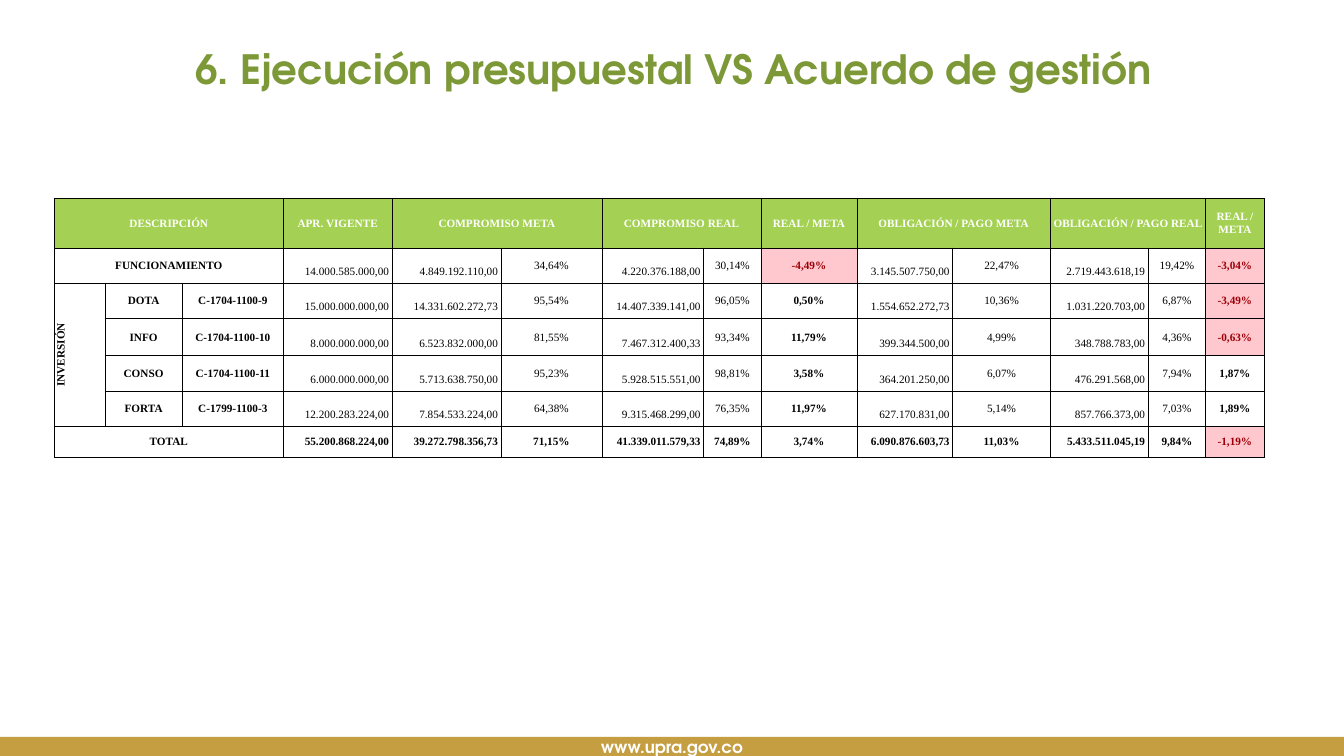
"""Builds the slide that compares budget execution with the management agreement."""
from lxml.etree import SubElement
from pptx import Presentation
from pptx.dml.color import RGBColor
from pptx.enum.shapes import MSO_SHAPE
from pptx.enum.text import MSO_ANCHOR, MSO_AUTO_SIZE, PP_ALIGN
from pptx.oxml import parse_xml
from pptx.oxml.ns import nsdecls, qn
from pptx.util import Inches, Pt

WHITE = RGBColor(0xFF, 0xFF, 0xFF)
BLACK = RGBColor(0x00, 0x00, 0x00)
TITLE_GREEN = RGBColor(0x7D, 0x98, 0x37)
HEADER_GREEN = RGBColor(0xA4, 0xD1, 0x53)
GOLD = RGBColor(0xC5, 0x9E, 0x41)
PINK = RGBColor(0xFF, 0xC7, 0xCE)
DARK_RED = RGBColor(0x9C, 0x00, 0x06)

COLUMN_WIDTHS = [0.5, 0.77, 1, 1.08, 1.08, 1, 1.01, 0.57, 0.95, 0.95, 0.97, 0.97, 0.57, 0.58]
ROW_HEIGHTS = [0.49, 0.35, 0.35, 0.37, 0.35, 0.35, 0.31]
AMOUNT_COLUMNS = {3, 4, 6, 9, 11}
BOLD_COLUMNS = {0, 1, 2, 8, 13}
MERGES = [(0, 0, 0, 2), (0, 4, 0, 5), (0, 6, 0, 7), (0, 9, 0, 10), (0, 11, 0, 12),
          (1, 0, 1, 2), (2, 0, 5, 0), (6, 0, 6, 2)]
BUDGET = [
    ["DESCRIPCIÓN", "", "", "APR. VIGENTE", "COMPROMISO META", "", "COMPROMISO REAL", "",
     "REAL / META", "OBLIGACIÓN / PAGO META", "", "OBLIGACIÓN / PAGO REAL", "", "REAL / META"],
    ["FUNCIONAMIENTO", "", "", "14.000.585.000,00", "4.849.192.110,00", "34,64%",
     "4.220.376.188,00", "30,14%", "-4,49%", "3.145.507.750,00", "22,47%",
     "2.719.443.618,19", "19,42%", "-3,04%"],
    ["INVERSIÓN", "DOTA", "C-1704-1100-9", "15.000.000.000,00", "14.331.602.272,73", "95,54%",
     "14.407.339.141,00", "96,05%", "0,50%", "1.554.652.272,73", "10,36%",
     "1.031.220.703,00", "6,87%", "-3,49%"],
    ["", "INFO", "C-1704-1100-10", "8.000.000.000,00", "6.523.832.000,00", "81,55%",
     "7.467.312.400,33", "93,34%", "11,79%", "399.344.500,00", "4,99%",
     "348.788.783,00", "4,36%", "-0,63%"],
    ["", "CONSO", "C-1704-1100-11", "6.000.000.000,00", "5.713.638.750,00", "95,23%",
     "5.928.515.551,00", "98,81%", "3,58%", "364.201.250,00", "6,07%",
     "476.291.568,00", "7,94%", "1,87%"],
    ["", "FORTA", "C-1799-1100-3", "12.200.283.224,00", "7.854.533.224,00", "64,38%",
     "9.315.468.299,00", "76,35%", "11,97%", "627.170.831,00", "5,14%",
     "857.766.373,00", "7,03%", "1,89%"],
    ["TOTAL", "", "", "55.200.868.224,00", "39.272.798.356,73", "71,15%",
     "41.339.011.579,33", "74,89%", "3,74%", "6.090.876.603,73", "11,03%",
     "5.433.511.045,19", "9,84%", "-1,19%"],
]


class BudgetSlide:
    """Holds the fonts and the current page, and draws each kind of element."""

    heading_font = "TeX Gyre Adventor"
    table_font = "Times New Roman"

    def __init__(self, deck):
        """Adds a title-only page to the deck."""
        self.page = deck.slides.add_slide(deck.slide_layouts[5])

    def set_text(self, para, text, font_name, size, color, bold, align):
        """Fills one paragraph with uniformly formatted text."""
        para.text = text
        para.alignment = align
        font = para.font
        font.name, font.size, font.bold = font_name, Pt(size), bold
        font.color.rgb = color

    def title(self, text, left, top, width, height):
        """Places and formats the title placeholder."""
        box = self.page.shapes.title
        box.left, box.top = Inches(left), Inches(top)
        box.width, box.height = Inches(width), Inches(height)
        frame = box.text_frame
        frame.auto_size = MSO_AUTO_SIZE.NONE
        frame.word_wrap = True
        frame.vertical_anchor = MSO_ANCHOR.TOP
        frame.margin_left = 0
        para = frame.paragraphs[0]
        self.set_text(para, text, self.heading_font, 28.8, TITLE_GREEN, True, PP_ALIGN.RIGHT)
        para.line_spacing = 0.9

    def band(self, text, left, top, width, height):
        """Draws a gold band with centred text."""
        box = self.page.shapes.add_shape(
            MSO_SHAPE.RECTANGLE, Inches(left), Inches(top), Inches(width), Inches(height))
        box.shadow.inherit = False
        box.fill.solid()
        box.fill.fore_color.rgb = GOLD
        box.line.fill.background()
        frame = box.text_frame
        frame.margin_top = frame.margin_bottom = 0
        frame.vertical_anchor = MSO_ANCHOR.MIDDLE
        self.set_text(frame.paragraphs[0], text, self.heading_font, 12, WHITE, True,
                      PP_ALIGN.CENTER)

    def table(self, values, left, top):
        """Draws the budget table with its merged cells."""
        table = self.page.shapes.add_table(
            len(ROW_HEIGHTS), len(COLUMN_WIDTHS), Inches(left), Inches(top),
            Inches(sum(COLUMN_WIDTHS)), Inches(sum(ROW_HEIGHTS))).table
        table.first_row = table.horz_banding = False
        for column, width in zip(table.columns, COLUMN_WIDTHS):
            column.width = Inches(width)
        for row, height in zip(table.rows, ROW_HEIGHTS):
            row.height = Inches(height)
        for row_index, row_values in enumerate(values):
            for column_index, text in enumerate(row_values):
                self.cell(table.cell(row_index, column_index), text, row_index, column_index)
        for first_row, first_column, last_row, last_column in MERGES:
            table.cell(first_row, first_column).merge(table.cell(last_row, last_column))
        table.cell(2, 0)._tc.get_or_add_tcPr().set("vert", "vert270")

    def cell(self, cell, text, row_index, column_index):
        """Formats one cell according to its row, column and sign."""
        is_header = row_index == 0
        is_total = row_index == len(ROW_HEIGHTS) - 1
        is_amount = column_index in AMOUNT_COLUMNS and not is_header
        is_negative = text.startswith("-")
        cell.margin_left = cell.margin_right = cell.margin_top = cell.margin_bottom = 0
        cell.vertical_anchor = MSO_ANCHOR.MIDDLE
        if is_amount:
            cell.margin_right = Inches(0.03)
            cell.margin_top = Inches(0 if is_total else 0.12)
        if is_header or is_negative:
            cell.fill.solid()
            cell.fill.fore_color.rgb = HEADER_GREEN if is_header else PINK
        else:
            cell.fill.background()
        color = WHITE if is_header else DARK_RED if is_negative else BLACK
        bold = is_header or is_total or column_index in BOLD_COLUMNS
        align = PP_ALIGN.RIGHT if is_amount else PP_ALIGN.CENTER
        self.set_text(cell.text_frame.paragraphs[0], text, self.table_font, 8, color, bold, align)
        self.borders(cell)

    def borders(self, cell):
        """Adds thin black lines to the four sides of a cell."""
        properties = cell._tc.get_or_add_tcPr()
        for position, side in enumerate(("lnL", "lnR", "lnT", "lnB")):
            line = parse_xml(f'<a:{side} {nsdecls("a")} w="{Pt(0.5)}"/>')
            fill = SubElement(line, qn("a:solidFill"))
            SubElement(fill, qn("a:srgbClr"), val=str(BLACK))
            properties.insert(position, line)


def main():
    """Builds and saves the deck."""
    deck = Presentation()
    deck.slide_width, deck.slide_height = Inches(13.33), Inches(7.5)
    slide = BudgetSlide(deck)
    slide.band("www.upra.gov.co", 0, 7.31, 13.33, 0.19)
    slide.title("6. Ejecución presupuestal VS Acuerdo de gestión", 1.82, 0.44, 9.7, 0.87)
    slide.table(BUDGET, 0.54, 1.97)
    deck.save("out.pptx")


if __name__ == "__main__":
    main()
